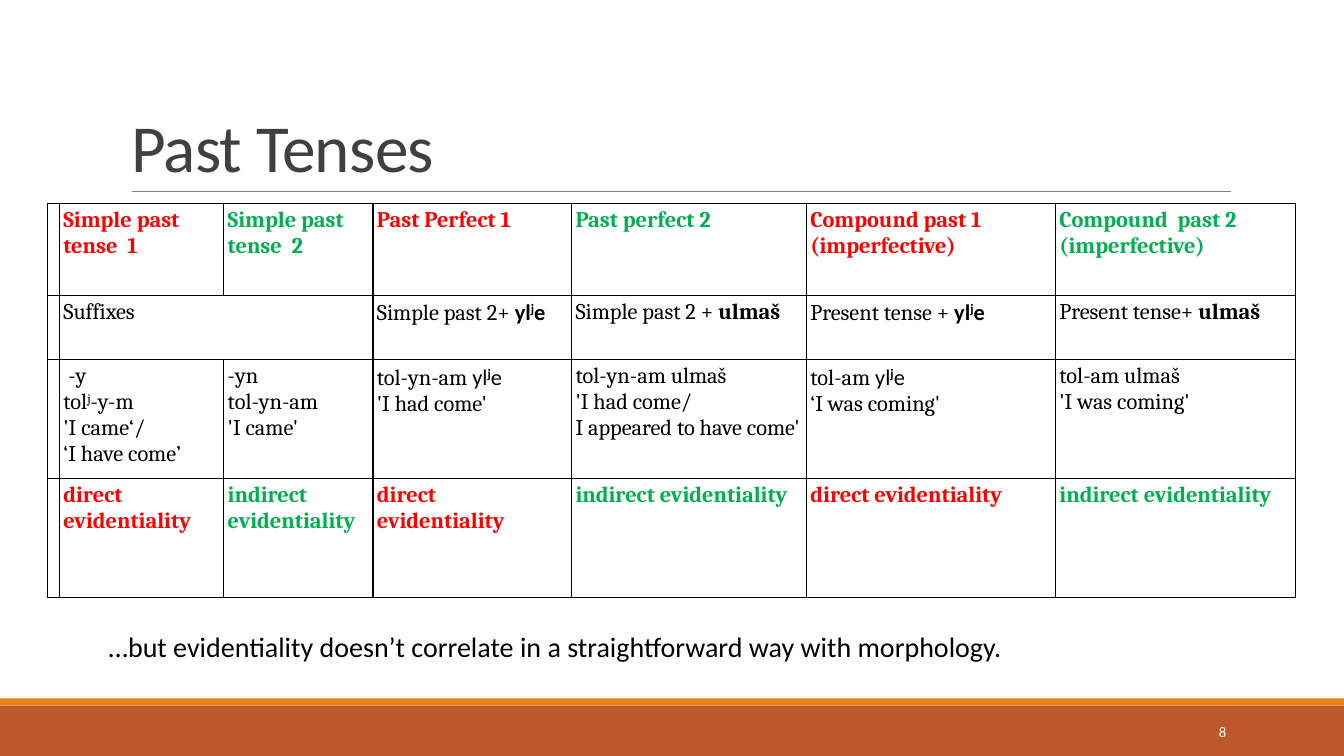
from typing import NamedTuple

from lxml import etree
from pptx import Presentation
from pptx import util as u
from pptx.dml.color import RGBColor
from pptx.enum import shapes, text
from pptx.oxml.ns import qn

HUES = {"rust": "BD582C", "amber": "E48312", "rule": "808080", "title": "404040",
        "red": "FF0000", "green": "00B050", "black": "000000", "white": "FFFFFF"}
LEFT, RIGHT, JUST = text.PP_ALIGN.LEFT, text.PP_ALIGN.RIGHT, text.PP_ALIGN.JUSTIFY


class Run(NamedTuple):
    words: str
    bold: bool = False
    face: str = "Cambria"
    hue: str = "black"
    size: float = 16
    base: int = 0


class Cell(NamedTuple):
    paras: list[list[Run]]
    align: text.PP_ALIGN = LEFT


class Band(NamedTuple):
    top: float
    high: float
    hue: str


def color(name: str) -> RGBColor:
    return RGBColor.from_string(HUES[name])


def write(frame, paras: list[list[Run]], align=LEFT, **form) -> None:
    """Fill a text frame or cell, then set the given format values on it."""
    for key, val in form.items():
        setattr(frame, key, val)
    body = getattr(frame, "text_frame", frame)
    for i, runs in enumerate(paras):
        para = body.paragraphs[0] if i == 0 else body.add_paragraph()
        para.alignment = align
        for run in runs:
            part = para.add_run()
            part.text = run.words
            font = {"name": run.face, "size": u.Pt(run.size), "bold": run.bold}
            for key, val in font.items():
                setattr(part.font, key, val)
            part.font.color.rgb = color(run.hue)
            if run.base:
                part.font._rPr.set("baseline", str(run.base * 1000))


def border(cell) -> None:
    """Draw a one-point black line on all four sides."""
    props = cell._tc.get_or_add_tcPr()
    for i, side in enumerate(("a:lnL", "a:lnR", "a:lnT", "a:lnB")):
        line = etree.Element(qn(side), w=str(u.Pt(1)))
        fill = etree.SubElement(line, qn("a:solidFill"))
        etree.SubElement(fill, qn("a:srgbClr"), val=HUES["black"])
        props.insert(i, line)


def add_band(slide, band: Band) -> None:
    bar = slide.shapes.add_shape(shapes.MSO_SHAPE.RECTANGLE, 0, u.Inches(band.top),
                                 u.Inches(13.33), u.Inches(band.high))
    bar.shadow.inherit = False
    bar.fill.solid()
    bar.fill.fore_color.rgb = color(band.hue)
    bar.line.fill.background()


def add_rule(slide) -> None:
    rule = slide.shapes.add_connector(shapes.MSO_CONNECTOR.STRAIGHT, u.Inches(1.31),
                                      u.Inches(1.9), u.Inches(12.21), u.Inches(1.9))
    rule.line.color.rgb = color("rule")
    rule.line.width = u.Pt(0.5)
    etree.SubElement(rule._element.spPr, qn("a:effectLst"))


def add_title(slide) -> None:
    title = slide.shapes.title
    place = {"left": 1.2, "top": 0.31, "width": 11, "height": 1.59}
    for key, val in place.items():
        setattr(title, key, u.Inches(val))
    write(title.text_frame, [[Run("Past Tenses", face="Calibri", hue="title", size=48)]],
          vertical_anchor=text.MSO_ANCHOR.BOTTOM, word_wrap=True)
    para = title.text_frame.paragraphs[0]
    para.line_spacing = 0.85
    para.runs[0].font._rPr.set("spc", "-50")


def add_note(slide, box: tuple[float, ...], run: Run, align, anchor) -> None:
    note = slide.shapes.add_textbox(*map(u.Inches, box))
    write(note.text_frame, [[run]], align, word_wrap=True, vertical_anchor=anchor)


def plain(*lines: str, align=LEFT) -> Cell:
    return Cell([[Run(line)] for line in lines], align)


def vivid(hue: str, *lines: str, align=LEFT) -> Cell:
    return Cell([[Run(line, True, hue=hue)] for line in lines], align)


def aux(bold: bool) -> list[Run]:
    """The auxiliary verb with its raised j, which is always bold."""
    return [Run("yl", bold, "Calibri"), Run("j", True, "Calibri", base=30),
            Run("e", bold, "Calibri")]


def suffix(stem: str, tail: list[Run]) -> Cell:
    return Cell([[Run(stem), *tail]], JUST)


ULMAS = [Run("ulmaš", True)]
DIRECT, INDIRECT = "direct evidentiality", "indirect evidentiality"
COLS = (0.11, 1.63, 1.48, 1.97, 2.33, 2.47, 2.38)
ROWS = (0.91, 0.64, 1.18, 1.18)
VOID = Cell([])
GRID = [
    [VOID, vivid("red", "Simple past tense  1"), vivid("green", "Simple past tense  2"),
     vivid("red", "Past Perfect 1"), vivid("green", "Past perfect 2"),
     vivid("red", "Compound past 1", "(imperfective)"),
     vivid("green", "Compound  past 2", "(imperfective)")],
    [VOID, plain("Suffixes", align=JUST), VOID,
     suffix("Simple past 2+ ", aux(True)), suffix("Simple past 2 + ", ULMAS),
     suffix("Present tense + ", aux(True)), suffix("Present tense+ ", ULMAS)],
    [VOID,
     Cell([[Run(" -y")], [Run("tol"), Run("j", base=30), Run("-y-m")],
           [Run("'I came‘/")], [Run("‘I have come’")]]),
     plain("-yn", "tol-yn-am", "'I came'"),
     Cell([[Run("tol-yn-am "), *aux(False)], [Run("'I had come'")]], JUST),
     plain("tol-yn-am ulmaš ", "'I had come/", "I appeared to have come'", align=JUST),
     Cell([[Run("tol-am "), *aux(False)], [Run("‘I was coming'")]]),
     plain("tol-am ulmaš ", "'I was coming'", align=JUST)],
    [VOID, vivid("red", DIRECT), vivid("green", INDIRECT), vivid("red", DIRECT),
     vivid("green", INDIRECT, align=JUST), vivid("red", DIRECT),
     vivid("green", INDIRECT, align=JUST)],
]


def add_tenses(slide) -> None:
    table = slide.shapes.add_table(len(ROWS), len(COLS), u.Inches(0.47), u.Inches(2.02),
                                   u.Inches(sum(COLS)), u.Inches(sum(ROWS))).table
    table.first_row = table.horz_banding = False
    for col, wide in zip(table.columns, COLS):
        col.width = u.Inches(wide)
    for row, high in zip(table.rows, ROWS):
        row.height = u.Inches(high)
    sides = ("left", "right", "top", "bottom")
    form = {f"margin_{side}": u.Inches(0.04) for side in sides}
    for row, cells in zip(table.rows, GRID):
        for cell, item in zip(row.cells, cells):
            write(cell, item.paras, item.align, **form)
            cell.fill.background()
            border(cell)
    table.cell(1, 1).merge(table.cell(1, 2))


def main() -> None:
    deck = Presentation()
    deck.slide_width, deck.slide_height = u.Inches(13.33), u.Inches(7.5)
    slide = deck.slides.add_slide(deck.slide_layouts[5])
    for band in (Band(7, 0.5, "rust"), Band(6.93, 0.07, "amber")):
        add_band(slide, band)
    add_rule(slide)
    add_title(slide)
    add_tenses(slide)
    add_note(slide, (0.98, 6.2, 9.37, 0.44),
             Run("…but evidentiality doesn’t correlate in a straightforward way with "
                 "morphology.", face="Calibri", size=20), LEFT, text.MSO_ANCHOR.TOP)
    add_note(slide, (10.83, 7.06, 1.43, 0.4),
             Run("8", face="Calibri", hue="white", size=10.5), RIGHT,
             text.MSO_ANCHOR.MIDDLE)
    deck.save("out.pptx")


if __name__ == "__main__":
    main()
